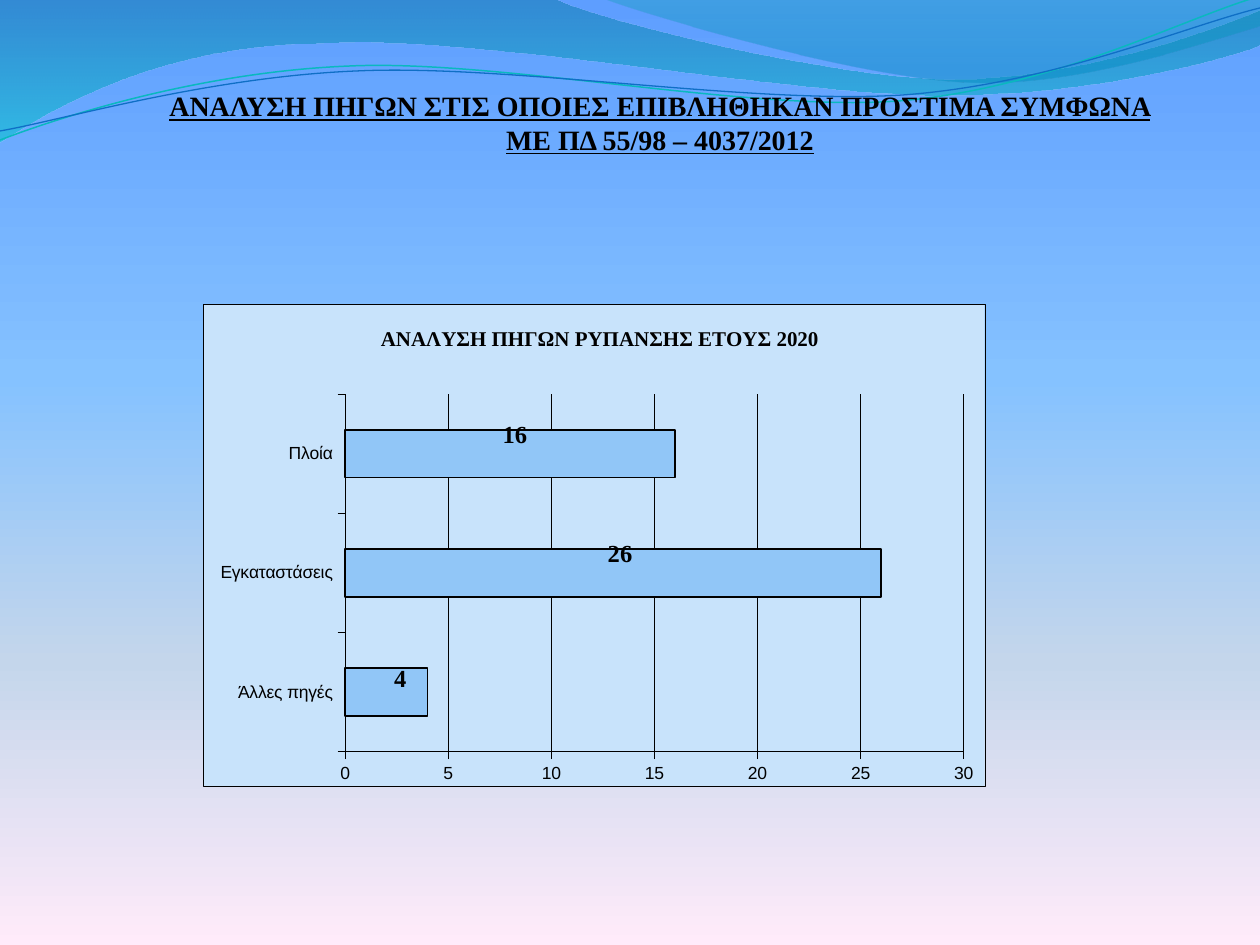
from dataclasses import dataclass

from lxml import etree
from pptx import Presentation
from pptx import util as u
from pptx.chart.data import CategoryChartData
from pptx.dml.color import RGBColor
from pptx.enum import chart as ch, text
from pptx.oxml import parse_xml
from pptx.oxml.ns import nsdecls, qn

SCALE = 914400 / 126  # EMU per px
WIDE, HIGH = 782, 482  # chart size
INK = {"text": "000000", "panel": "C8E3FB", "bar": "91C6F7",
       "teal": "0AB8BF", "blue": "0F6FC6"}
SERIF, SANS = "Times New Roman", "Arial"
# Gradient stops: position %, colour, opacity %
SKY = [(0, "5E9EFF", 100), (40, "85C2FF", 100),
       (70, "C4D6EB", 100), (100, "FFEBFA", 100)]
DEEP = [(0, "0074A1", 45), (100, "00C6CF", 55)]
PALE = [(0, "00A1A9", 30), (80, "008BBF", 45)]


@dataclass
class Wave:
    """Pieces hold one point for a line, three for a cubic curve."""
    start: tuple
    pieces: list
    stops: list | None = None
    ink: str = ""
    width: float = 0


WAVES = [
    Wave((0, -1), [
        [(554, -1)],
        [(600, 21), (837, 79), (955, 79)],
        [(1074, 79), (1207, 33), (1260, 11)],
        [(1261, 45)],
        [(1239, 55), (1096, 96), (940, 95)],
        [(784, 95), (481, 35), (324, 43)],
        [(163, 44), (58, 105), (-1, 142)]], stops=DEEP),
    Wave((604, -1), [
        [(641, 14), (859, 78), (969, 82)],
        [(1079, 87), (1211, 40), (1260, 26)],
        [(1260, 0)]], stops=PALE),
    Wave((0, 140), [
        [(60, 117), (199, 72), (349, 66)],
        [(498, 59), (747, 112), (898, 101)],
        [(1050, 89), (1182, 19), (1257, -3)]], ink="teal", width=0.85),
    Wave((0, 131), [
        [(59, 121), (207, 77), (357, 71)],
        [(508, 64), (752, 105), (903, 95)],
        [(1053, 84), (1186, 26), (1260, 8)]], ink="blue", width=0.75),
]


def px(n: float) -> int:
    return round(n * SCALE)


def rgb(name: str) -> RGBColor:
    return RGBColor.from_string(INK[name])


def style(font, size: float, face: str, bold: bool = False) -> None:
    font.size, font.name, font.bold = u.Pt(size), face, bold
    font.color.rgb = rgb("text")


def stroke(line, name: str, width: float) -> None:
    line.color.rgb, line.width = rgb(name), u.Pt(width)


def grade(fill, stops: list) -> None:
    """Give a fill a top-to-bottom gradient with any number of stops."""
    fill.gradient()
    fill.gradient_angle = 270
    gs = fill._fill._gradFill.find(qn("a:gsLst"))
    for old in list(gs):
        gs.remove(old)
    for pos, color, alpha in stops:
        gs.append(parse_xml(
            f'<a:gs {nsdecls("a")} pos="{pos * 1000}"><a:srgbClr val="{color}">'
            f'<a:alpha val="{alpha * 1000}"/></a:srgbClr></a:gs>'))


def bend(shape, wave: Wave) -> None:
    """Turn the straight pieces of a shape into the wave's curves."""
    ends = [wave.start] + [p[-1] for p in wave.pieces]
    left, top = (min(e[k] for e in ends) for k in (0, 1))
    lines = list(shape._element.iter(qn("a:lnTo")))
    for line, piece in zip(lines, wave.pieces):
        if len(piece) == 3:
            pts = "".join(f'<a:pt x="{x - left}" y="{y - top}"/>' for x, y in piece)
            line.getparent().replace(line, parse_xml(
                f'<a:cubicBezTo {nsdecls("a")}>{pts}</a:cubicBezTo>'))


def draw(slide, wave: Wave) -> None:
    """Draw a wave and hand it to the slide's layout, as backdrop."""
    pen = slide.shapes.build_freeform(*wave.start, scale=SCALE)
    pen.add_line_segments([p[-1] for p in wave.pieces], close=bool(wave.stops))
    shape = pen.convert_to_shape()
    bend(shape, wave)
    shape.shadow.inherit = False
    if wave.stops:
        grade(shape.fill, wave.stops)
        shape.line.fill.background()
    else:
        shape.fill.background()
        stroke(shape.line, wave.ink, wave.width)
    slide.slide_layout.shapes._spTree.append(shape._element)


def layout(x: int, y: int, w: int = 0, h: int = 0, edge: bool = True) -> etree._Element:
    """Make a manual chart layout from px within the chart."""
    tags = '<c:layoutTarget val="inner"/>' if w else ""
    if edge:
        tags += '<c:xMode val="edge"/><c:yMode val="edge"/>'
    tags += f'<c:x val="{x / WIDE}"/><c:y val="{y / HIGH}"/>'
    if w:
        tags += f'<c:w val="{w / WIDE}"/><c:h val="{h / HIGH}"/>'
    return parse_xml(f'<c:layout {nsdecls("c")}><c:manualLayout>{tags}'
                     '</c:manualLayout></c:layout>')


def place(node, new) -> None:
    """Put a layout in a node, in place of any old one."""
    old = node.find(qn("c:layout"))
    if old is not None:
        node.remove(old)
    at = 1 if len(node) and node[0].tag in (qn("c:tx"), qn("c:idx")) else 0
    node.insert(at, new)


def paint(name: str, edge: str) -> etree._Element:
    return parse_xml(f'<c:spPr {nsdecls("c", "a")}><a:solidFill><a:srgbClr '
                     f'val="{INK[name]}"/></a:solidFill>{edge}</c:spPr>')


def plot(slide) -> None:
    data = CategoryChartData()
    data.categories = ["Άλλες πηγές", "Εγκαταστάσεις", "Πλοία"]
    data.add_series("Series 1", [4, 26, 16])
    chart = slide.shapes.add_chart(
        ch.XL_CHART_TYPE.BAR_STACKED, px(203), px(304), px(WIDE), px(HIGH), data).chart
    style(chart.font, 10, SANS)
    chart.has_legend = False

    # Title
    chart.has_title = True
    run = chart.chart_title.text_frame.paragraphs[0].add_run()
    run.text = "ΑΝΑΛΥΣΗ ΠΗΓΩΝ ΡΥΠΑΝΣΗΣ ΕΤΟΥΣ 2020"
    style(run.font, 12, SERIF, True)
    place(chart.chart_title._element, layout(174, 18))

    # Axes
    for axis in (chart.category_axis, chart.value_axis):
        style(axis.tick_labels.font, 10, SANS)
        axis.major_tick_mark = ch.XL_TICK_MARK.OUTSIDE
        stroke(axis.format.line, "text", 0.25)
    chart.category_axis.tick_label_position = ch.XL_TICK_LABEL_POSITION.LOW
    axis.has_major_gridlines = True
    stroke(axis.major_gridlines.format.line, "text", 0.25)

    # Bars, with labels nudged up and right
    bars = chart.plots[0]
    bars.gap_width, bars.overlap, bars.vary_by_categories = 150, 100, False
    row = bars.series[0]
    row.format.fill.solid()
    row.format.fill.fore_color.rgb = rgb("bar")
    stroke(row.format.line, "text", 1)
    row.data_labels.show_value = True
    style(row.data_labels.font, 14, SERIF, True)
    for i, (x, y) in enumerate([(14, -13), (7, -19), (5, -19)]):
        label = row.points[i].data_label
        style(label.font, 14, SERIF, True)
        place(label._dLbl, layout(x, y, edge=False))

    # Panel
    body = chart._chartSpace.chart
    place(body.plotArea, layout(142, 90, 619, 358))
    body.plotArea.append(paint("panel", "<a:ln><a:noFill/></a:ln>"))
    body.addnext(paint("panel", '<a:ln w="3175"><a:solidFill><a:srgbClr '
                                f'val="{INK["text"]}"/></a:solidFill></a:ln>'))


def head(slide) -> None:
    title = slide.shapes.title
    title.left, title.top, title.width, title.height = map(px, (154, 96, 1012, 60))
    frame = title.text_frame
    frame.auto_size, frame.word_wrap = text.MSO_AUTO_SIZE.NONE, True
    frame.vertical_anchor = text.MSO_ANCHOR.BOTTOM
    frame.margin_left = frame.margin_right = frame.margin_bottom = 0
    frame.margin_top = px(6)
    para = frame.paragraphs[0]
    para.alignment = text.PP_ALIGN.CENTER
    run = para.add_run()
    run.text = ("ΑΝΑΛΥΣΗ ΠΗΓΩΝ ΣΤΙΣ ΟΠΟΙΕΣ ΕΠΙΒΛΗΘΗΚΑΝ ΠΡΟΣΤΙΜA ΣΥΜΦΩΝΑ "
                "ΜΕ ΠΔ 55/98 – 4037/2012")
    style(run.font, 16, SERIF, True)
    run.font.underline = True


def main() -> None:
    deck = Presentation()
    deck.slide_width, deck.slide_height = px(1260), px(945)
    slide = deck.slides.add_slide(deck.slide_layouts[5])
    grade(slide.background.fill, SKY)
    for wave in WAVES:
        draw(slide, wave)
    head(slide)
    plot(slide)
    deck.save("out.pptx")


if __name__ == "__main__":
    main()
